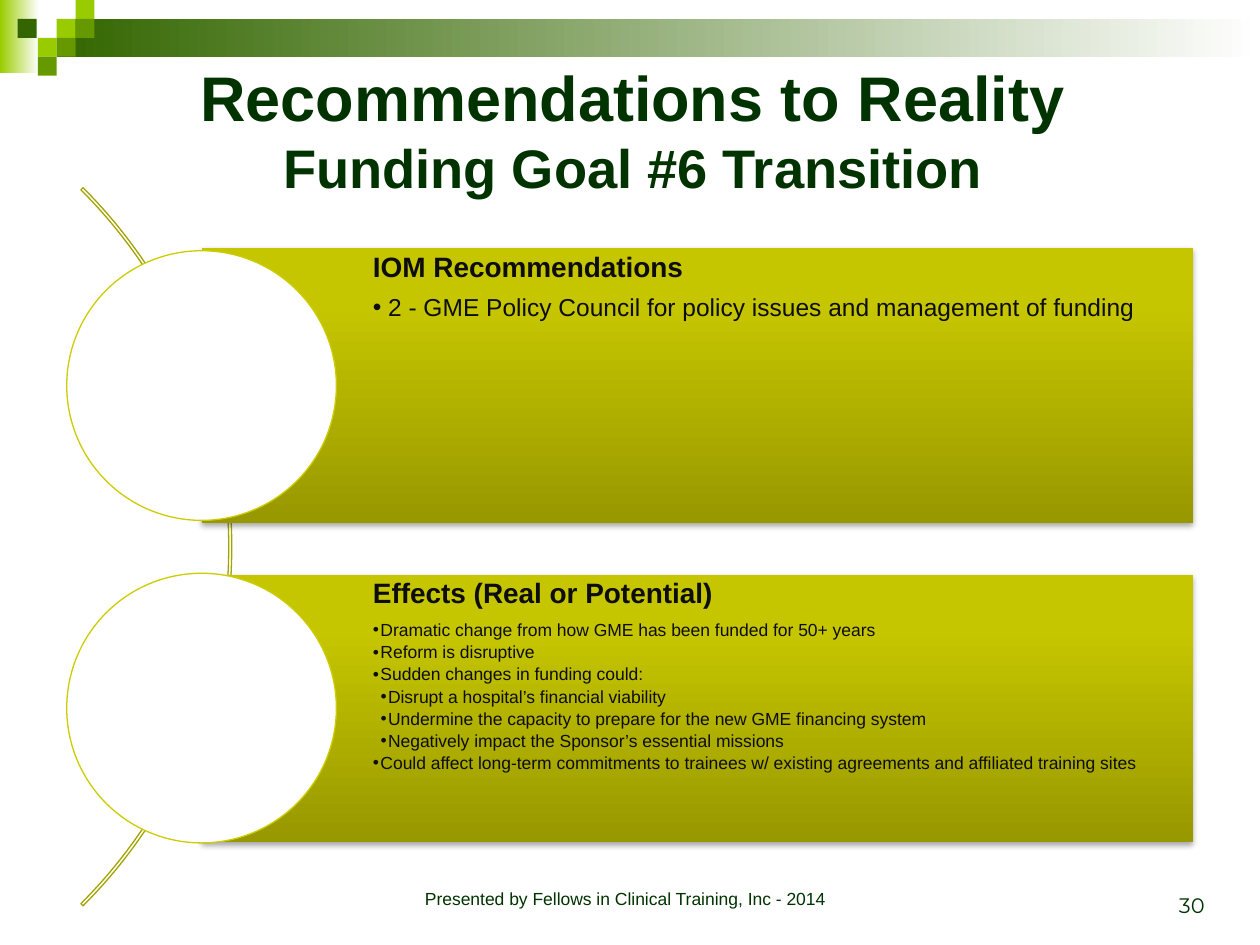
from lxml.etree import SubElement
from pptx import Presentation
from pptx.dml.color import RGBColor
from pptx.enum.shapes import MSO_SHAPE as Preset
from pptx.enum.text import MSO_ANCHOR as Anchor, MSO_AUTO_SIZE as AutoSize, PP_ALIGN as Align
from pptx.oxml.ns import qn
from pptx.util import Inches, Pt

TITLE = [("Recommendations to Reality", 36), ("Funding Goal #6 Transition", 31)]
PANELS = [
    {"heading": "IOM Recommendations", "top": 1.97, "height": 2.18, "size": 14, "hang": 0.12,
     "points": [(1, "2 - GME Policy Council for policy issues and management of funding")]},
    {"heading": "Effects (Real or Potential)", "top": 4.56, "height": 2.12, "size": 10, "hang": 0.06,
     "points": [
         (1, "Dramatic change from how GME has been funded for 50+ years"),
         (1, "Reform is disruptive"),
         (1, "Sudden changes in funding could:"),
         (2, "Disrupt a hospital’s financial viability"),
         (2, "Undermine the capacity to prepare for the new GME financing system"),
         (2, "Negatively impact the Sponsor’s essential missions"),
         (1, "Could affect long-term commitments to trainees w/ existing agreements"
             " and affiliated training sites")]},
]
FOOTER = "Presented by Fellows in Clinical Training, Inc - 2014"
PAGE = "30"
DARK, MID, LIME, WHITE = "336600", "669900", "99CC00", "FFFFFF"
INK, PANEL_INK = "003300", "0D0D0D"
PANEL_STOPS = [(0, "989800"), (80, "C6C600"), (100, "C7C700")]
BANDS = [((0, 0, 0.31, 0.58), LIME), ((0.45, 0.15, 9.55, 0.3), DARK)]
TILE = 0.15
TILES = [(0.45, 0.15, LIME), (0.6, 0, LIME), (0.6, 0.15, MID), (0.3, 0.3, LIME),
         (0.14, 0.15, DARK), (0.45, 0.3, MID), (0.3, 0.45, MID)]
CIRCLE = 2.14


def rgb(code):
    return RGBColor.from_string(code)


def place(shape, box):
    shape.left, shape.top, shape.width, shape.height = map(Inches, box)


def add_preset(slide, preset, box, fill=None, line=None):
    shape = slide.shapes.add_shape(preset, *map(Inches, box))
    shape.shadow.inherit = False
    if fill:
        shape.fill.solid()
        shape.fill.fore_color.rgb = rgb(fill)
    else:
        shape.fill.background()
    if line:
        shape.line.color.rgb = rgb(line)
        shape.line.width = Pt(0.75)
    else:
        shape.line.fill.background()
    return shape


def set_gradient(shape, stops, angle):
    shape.fill.gradient()
    gradient = shape._element.spPr.find(qn("a:gradFill"))
    stop_list = gradient.find(qn("a:gsLst"))
    for stop in list(stop_list):
        stop_list.remove(stop)
    for position, color in stops:
        stop = SubElement(stop_list, qn("a:gs"), pos=str(position * 1000))
        SubElement(stop, qn("a:srgbClr"), val=color)
    gradient.find(qn("a:lin")).set("ang", str(angle * 60000))


def add_shadow(shape):
    shape.shadow.inherit = False
    effects = shape._element.spPr.find(qn("a:effectLst"))
    shadow = SubElement(effects, qn("a:outerShdw"), blurRad=str(Pt(3.1)), dist=str(Pt(1.8)),
                        dir="5400000", rotWithShape="0")
    black = SubElement(shadow, qn("a:srgbClr"), val="000000")
    SubElement(black, qn("a:alpha"), val="35000")


def add_run(paragraph, text, size, color, bold=False, font="Arial"):
    run = paragraph.add_run()
    run.text = text
    run.font.name, run.font.size, run.font.bold = font, Pt(size), bold
    run.font.color.rgb = rgb(color)


def format_line(paragraph, size, after, margin=0, hang=0, bullet=None):
    paragraph.alignment = Align.LEFT
    paragraph.line_spacing = 0.9
    paragraph.space_before = Pt(0)
    paragraph.space_after = Pt(round(size * after * 1.2, 1))
    properties = paragraph._p.get_or_add_pPr()
    properties.set("marL", str(Inches(margin)))
    properties.set("indent", str(Inches(-hang)))
    if bullet:
        SubElement(properties, qn("a:buChar"), char=bullet)
    else:
        SubElement(properties, qn("a:buNone"))


def fill_panel(body, panel):
    place(body, (1.6, panel["top"], 7.87, panel["height"]))
    set_gradient(body, PANEL_STOPS, 270)
    add_shadow(body)
    frame = body.text_frame
    frame.auto_size, frame.word_wrap = AutoSize.NONE, True
    frame.vertical_anchor = Anchor.TOP
    frame.margin_left = Inches(1.36)
    frame.margin_top = frame.margin_right = frame.margin_bottom = Inches(0.04)
    heading = frame.paragraphs[0]
    format_line(heading, 16, 0.35)
    add_run(heading, panel["heading"], 16, PANEL_INK, bold=True)
    size, hang = panel["size"], panel["hang"]
    for level, text in panel["points"]:
        point = frame.add_paragraph()
        point.level = level
        format_line(point, size, 0.15, level * hang, hang, "•")
        add_run(point, text, size, PANEL_INK)


def add_label(slide, box, text, size, font, align, anchor):
    frame = slide.shapes.add_textbox(*map(Inches, box)).text_frame
    frame.word_wrap, frame.vertical_anchor = True, anchor
    frame.paragraphs[0].alignment = align
    add_run(frame.paragraphs[0], text, size, INK, font=font)


def main():
    """Build the funding goal transition slide."""
    deck = Presentation()
    deck.slide_width, deck.slide_height = Inches(10), Inches(7.5)
    slide = deck.slides.add_slide(deck.slide_layouts[3])
    title, *bodies = slide.placeholders
    tree = slide.shapes._spTree

    for box, color in BANDS:
        set_gradient(add_preset(slide, Preset.RECTANGLE, box), [(0, color), (100, WHITE)], 0)
    for left, top, color in TILES:
        add_preset(slide, Preset.RECTANGLE, (left, top, TILE, TILE), color)

    tree.append(title._element)
    place(title, (0.33, 0.3, 9.38, 1.45))
    title.text_frame.auto_size = AutoSize.NONE
    title.text_frame.vertical_anchor = Anchor.MIDDLE
    title_line = title.text_frame.paragraphs[0]
    title_line.alignment = Align.CENTER
    for index, (text, size) in enumerate(TITLE):
        if index:
            title_line.add_line_break()
        add_run(title_line, text, size, INK, bold=True)

    arc = add_preset(slide, Preset.BLOCK_ARC, (-6.22, 0.31, 8.06, 8.06), line="A3A300")
    for index, value in enumerate((189, 27, 0.003)):
        arc.adjustments[index] = value

    for body, panel in zip(bodies, PANELS):
        tree.append(body._element)
        fill_panel(body, panel)
        circle_top = panel["top"] + (panel["height"] - CIRCLE) / 2
        add_preset(slide, Preset.OVAL, (0.53, circle_top, CIRCLE, CIRCLE), WHITE, "CCCC00")

    add_label(slide, (2.75, 7, 4.42, 0.33), FOOTER, 10, "Arial", Align.CENTER, Anchor.TOP)
    add_label(slide, (7.33, 6.83, 2.33, 0.5), PAGE, 12, "Montserrat", Align.RIGHT, Anchor.BOTTOM)
    deck.save("out.pptx")


if __name__ == "__main__":
    main()
